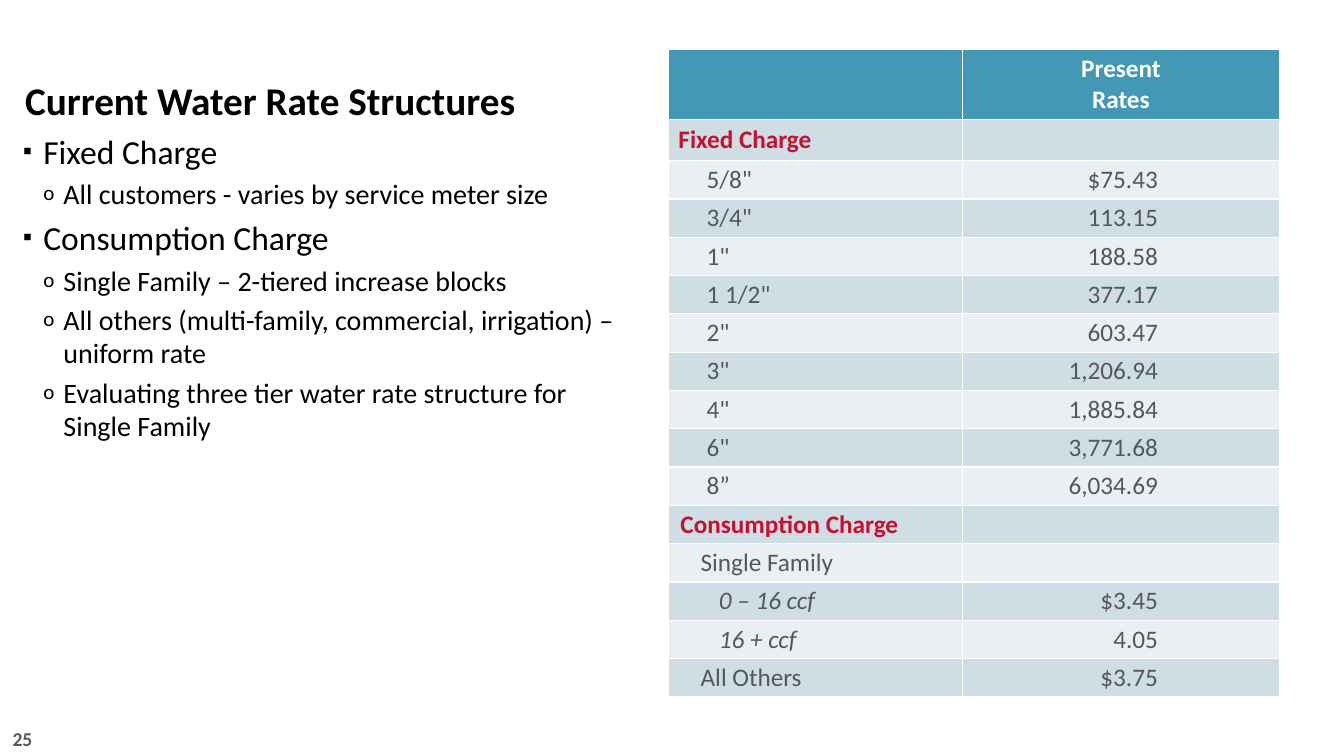
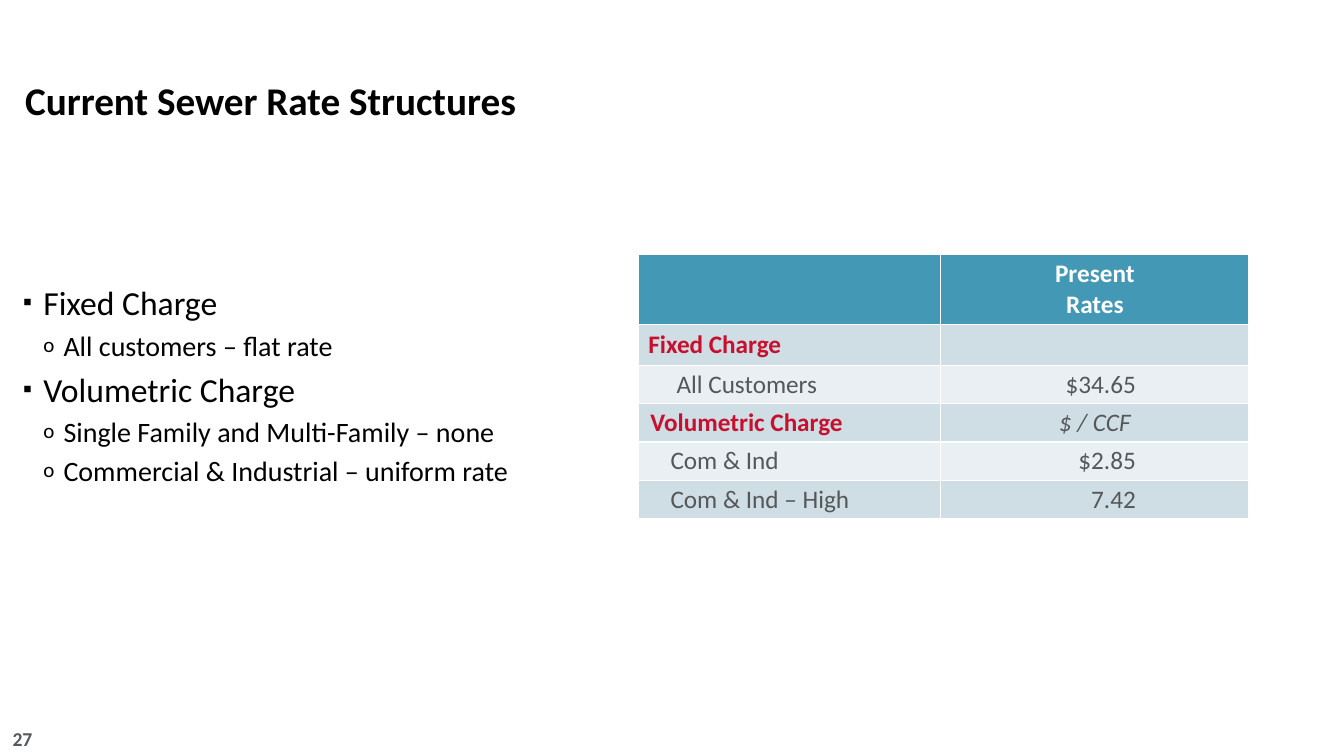
import lxml.etree
import pptx
import pptx.dml.color
import pptx.enum.text
import pptx.oxml
import pptx.oxml.ns
import pptx.util

WIDTH, HEIGHT = pptx.util.Inches(13.33), pptx.util.Inches(7.5)
COLUMN, ROW = WIDTH / 100, HEIGHT / 100  # the slide is a grid of 100 by 100

FONT = "Calibri"
BLACK, WHITE, GREY, RED = "000000", "FFFFFF", "54585A", "C8102E"
HEADER_FILL, BAND_FILLS = "4298B5", ("CFDDE5", "E9EFF3")
HEADER_ROW, FIRST_ROW, TABLE_ROW = 9.33, 5.4, 5.07
DECIMAL_TAB = pptx.util.Inches(1.62)
BULLETS = (("▪", 24), ("o", 20))  # character and text size of each level

# Indent in inches, colour, bold and italic of each kind of table label
LABELS = {
    "first": (0.1, RED, True, False),
    "heading": (0.12, RED, True, False),
    "size": (0.38, GREY, False, False),
    "class": (0.32, GREY, False, False),
    "tier": (0.5, GREY, False, True),
}

SLIDES = [
    {
        "title": "Current Water Rate Structures",
        "number": "25",
        "body": (16.67, 49.5),
        "bullets": [
            (0, "Fixed Charge"),
            (1, "All customers - varies by service meter size"),
            (0, "Consumption Charge"),
            (1, "Single Family – 2-tiered increase blocks"),
            (1, "All others (multi-family, commercial, irrigation) – uniform rate"),
            (1, "Evaluating three tier water rate structure for Single Family"),
        ],
        "table": (49.73, 6.53),
        "columns": (21.9, 23.55),
        "rates": [
            ("first", "Fixed Charge", ""),
            ("size", '5/8"', "$75.43"),
            ("size", '3/4"', "113.15"),
            ("size", '1"', "188.58"),
            ("size", '1 1/2"', "377.17"),
            ("size", '2"', "603.47"),
            ("size", '3"', "1,206.94"),
            ("size", '4"', "1,885.84"),
            ("size", '6"', "3,771.68"),
            ("size", "8”", "6,034.69"),
            ("heading", "Consumption Charge", ""),
            ("class", "Single Family", ""),
            ("tier", "0 – 16 ccf", "$3.45"),
            ("tier", "16 + ccf", "4.05"),
            ("class", "All Others", "$3.75"),
        ],
    },
    {
        "title": "Current Sewer Rate Structures",
        "number": "27",
        "body": (36.67, 100.15),
        "bullets": [
            (0, "Fixed Charge"),
            (1, "All customers – flat rate"),
            (0, "Volumetric Charge"),
            (1, "Single Family and Multi-Family – none"),
            (1, "Commercial & Industrial – uniform rate"),
        ],
        "table": (47.49, 33.6),
        "columns": (22.5, 22.95),
        "rates": [
            ("first", "Fixed Charge", ""),
            ("size", "All Customers", "$34.65"),
            ("heading", "Volumetric Charge", "$ / CCF"),
            ("class", "Com & Ind", "$2.85"),
            ("class", "Com & Ind – High", "7.42"),
        ],
    },
]


def add_run(paragraph, text, size, color, bold=False, italic=False):
    run = paragraph.add_run()
    run.text = text
    font = run.font
    font.name, font.size, font.bold, font.italic = FONT, pptx.util.Pt(size), bold, italic
    font.color.rgb = pptx.dml.color.RGBColor.from_string(color)


def add_text_frame(slide, left, top, width, height, inset):
    """Add a text box placed in grid units and return its text frame."""
    box = slide.shapes.add_textbox(int(left * COLUMN), int(top * ROW), int(width * COLUMN), int(height * ROW))
    frame = box.text_frame
    frame.word_wrap = True
    frame.margin_left = frame.margin_right = pptx.util.Inches(inset)
    return frame


presentation = pptx.Presentation()
presentation.slide_width, presentation.slide_height = WIDTH, HEIGHT

for content in SLIDES:
    slide = presentation.slides.add_slide(presentation.slide_layouts[6])

    # Bulleted text
    body_top, body_width = content["body"]
    frame = add_text_frame(slide, -0.15, body_top, body_width, 92 - body_top, 0.25)
    for index, (level, text) in enumerate(content["bullets"]):
        paragraph = frame.add_paragraph() if index else frame.paragraphs[0]
        character, size = BULLETS[level]
        paragraph.level = level
        paragraph.space_before = pptx.util.Pt(size * 0.2)
        add_run(paragraph, text, size, BLACK)
        properties = paragraph._p.get_or_add_pPr()
        properties.set("marL", str(pptx.util.Inches(0.2 * (level + 1))))
        properties.set("indent", str(pptx.util.Inches(-0.2)))
        for tag, name, value in (("a:buSzPct", "val", "75000"), ("a:buFont", "typeface", FONT),
                                 ("a:buChar", "char", character)):
            lxml.etree.SubElement(properties, pptx.oxml.ns.qn(tag)).set(name, value)

    # Title
    frame = add_text_frame(slide, 0, 0, 100, 16.93, 0.25)
    frame.vertical_anchor = pptx.enum.text.MSO_ANCHOR.BOTTOM
    frame.paragraphs[0].line_spacing = pptx.util.Pt(26)
    add_run(frame.paragraphs[0], content["title"], 28, BLACK, bold=True)

    # Slide number
    frame = add_text_frame(slide, 0, 95.47, 3.15, 4.53, 0.1)
    frame.paragraphs[0].alignment = pptx.enum.text.PP_ALIGN.RIGHT
    add_run(frame.paragraphs[0], content["number"], 14, GREY, bold=True)

    # Rate table
    left, top = content["table"]
    rates = content["rates"]
    heights = [HEADER_ROW, FIRST_ROW] + [TABLE_ROW] * (len(rates) - 1)
    table = slide.shapes.add_table(
        len(heights), 2, int(left * COLUMN), int(top * ROW),
        int(sum(content["columns"]) * COLUMN), int(sum(heights) * ROW)).table
    for column, width in zip(table.columns, content["columns"]):
        column.width = int(width * COLUMN)
    for row_index, (row, height) in enumerate(zip(table.rows, heights)):
        row.height = int(height * ROW)
        fill = BAND_FILLS[(row_index - 1) % 2] if row_index else HEADER_FILL
        for cell in row.cells:
            cell.margin_left = cell.margin_right = cell.margin_top = cell.margin_bottom = 0
            cell.vertical_anchor = pptx.enum.text.MSO_ANCHOR.MIDDLE
            cell_properties = cell._tc.get_or_add_tcPr()
            for side in "LRTB":
                cell_properties.append(pptx.oxml.parse_xml(
                    f'<a:ln{side} {pptx.oxml.ns.nsdecls("a")} w="12700"><a:solidFill>'
                    f'<a:srgbClr val="{WHITE}"/></a:solidFill></a:ln{side}>'))
            cell.fill.solid()
            cell.fill.fore_color.rgb = pptx.dml.color.RGBColor.from_string(fill)

    header = table.cell(0, 1).text_frame.paragraphs[0]
    header.alignment = pptx.enum.text.PP_ALIGN.CENTER
    add_run(header, "Present", 18, WHITE, bold=True)
    header.add_line_break()
    add_run(header, "Rates", 18, WHITE, bold=True)

    for row_index, (kind, label, value) in enumerate(rates, start=1):
        indent, color, bold, italic = LABELS[kind]
        paragraph = table.cell(row_index, 0).text_frame.paragraphs[0]
        paragraph._p.get_or_add_pPr().set("marL", str(pptx.util.Inches(indent)))
        add_run(paragraph, label, 18, color, bold, italic)

        paragraph = table.cell(row_index, 1).text_frame.paragraphs[0]
        if kind == "heading" and value:
            paragraph.alignment = pptx.enum.text.PP_ALIGN.CENTER
            add_run(paragraph, value, 18, GREY, italic=True)
        elif value:
            paragraph._p.get_or_add_pPr().append(pptx.oxml.parse_xml(
                f'<a:tabLst {pptx.oxml.ns.nsdecls("a")}><a:tab pos="{DECIMAL_TAB}" algn="dec"/></a:tabLst>'))
            add_run(paragraph, "\t" + value, 18, GREY)

presentation.save("out.pptx")
